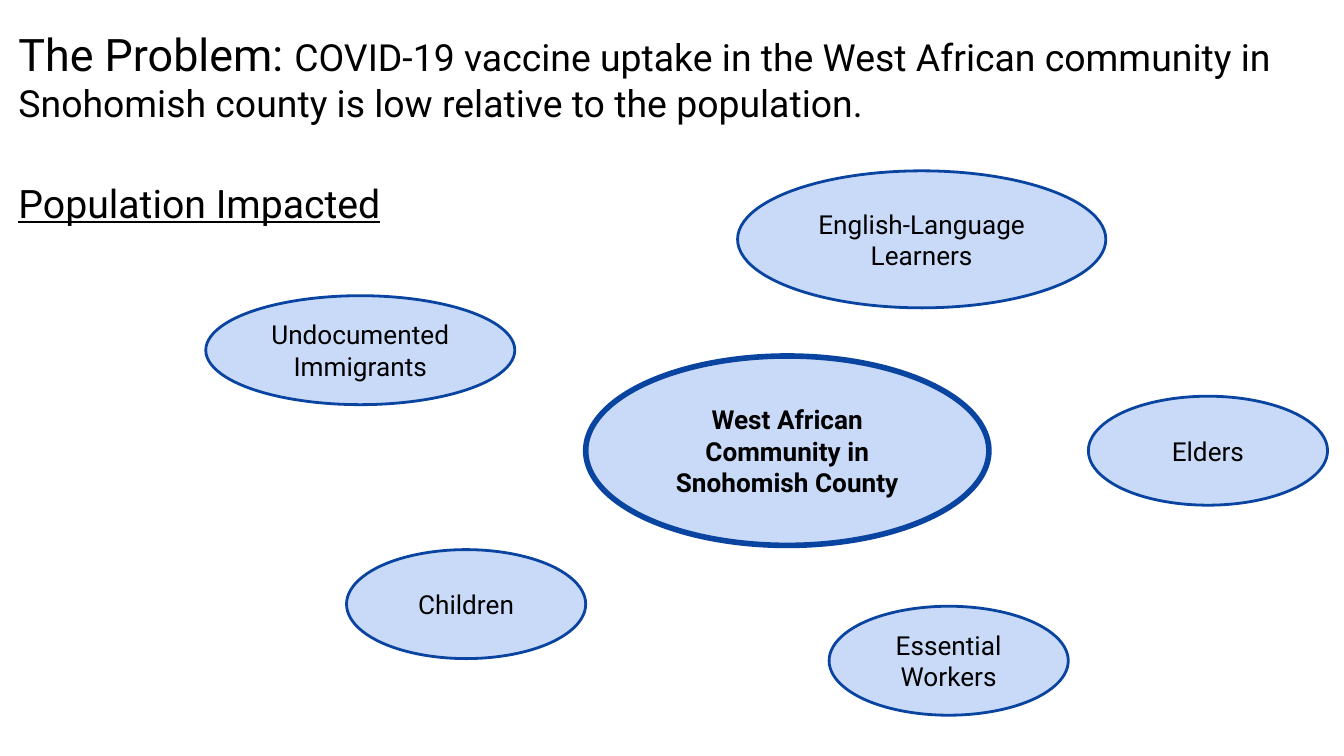
from pptx import Presentation
from pptx.dml.color import RGBColor
from pptx.enum.shapes import MSO_SHAPE
from pptx.enum.text import MSO_ANCHOR, PP_ALIGN
from pptx.util import Cm, Pt

BLACK = RGBColor(0x00, 0x00, 0x00)
PALE_BLUE = RGBColor(0xC9, 0xDA, 0xF8)
BLUE = RGBColor(0x09, 0x44, 0xA1)
INSET = Cm(0.25)


def setup_frame(sp):
    tf = sp.text_frame
    tf.word_wrap = True
    tf.margin_left = tf.margin_right = INSET
    tf.margin_top = tf.margin_bottom = INSET
    return tf


def style_run(r, size):
    r.font.name = "Roboto"
    r.font.size = Pt(size)
    r.font.color.rgb = BLACK


prs = Presentation()
prs.slide_width = Cm(25.4)
prs.slide_height = Cm(14.29)
s = prs.slides.add_slide(prs.slide_layouts[6])

# Problem statement
tf = setup_frame(s.shapes.add_textbox(Cm(0.1), Cm(0.25), Cm(25), Cm(2.39)))
p = tf.paragraphs[0]
for text, size in [
    ("The Problem: ", 24),
    ("COVID-19 vaccine uptake in the West African community in "
     "Snohomish county is low relative to the population.", 20),
]:
    r = p.add_run()
    r.text = text
    style_run(r, size)

# Section heading
tf = setup_frame(s.shapes.add_textbox(Cm(0.1), Cm(3), Cm(9.02), Cm(1.42)))
p = tf.paragraphs[0]
p.text = "Population Impacted"
p.line_spacing = 1.15
p.space_after = Pt(12)
style_run(p.runs[0], 21)
p.runs[0].font.underline = True

# Community in the centre and the groups around it:
# text, left, top, width, height, is centre
groups = [
    ("West African Community in Snohomish County", 11.07, 6.73, 7.62, 3.58, True),
    ("English-Language Learners", 13.94, 3.23, 6.96, 2.59, False),
    ("Elders", 20.57, 7.49, 4.52, 2.06, False),
    ("Essential Workers", 15.67, 11.46, 4.52, 2.06, False),
    ("Undocumented Immigrants", 3.89, 5.59, 5.84, 2.06, False),
    ("Children", 6.55, 10.39, 4.52, 2.06, False),
]
for text, left, top, width, height, is_centre in groups:
    sp = s.shapes.add_shape(MSO_SHAPE.OVAL, Cm(left), Cm(top), Cm(width), Cm(height))
    sp.shadow.inherit = False
    sp.fill.solid()
    sp.fill.fore_color.rgb = PALE_BLUE
    sp.line.color.rgb = BLUE
    sp.line.width = Pt(3 if is_centre else 1.5)
    tf = setup_frame(sp)
    tf.vertical_anchor = MSO_ANCHOR.MIDDLE
    p = tf.paragraphs[0]
    p.text = text
    p.alignment = PP_ALIGN.CENTER
    style_run(p.runs[0], 14)
    p.runs[0].font.bold = is_centre

prs.save("out.pptx")
